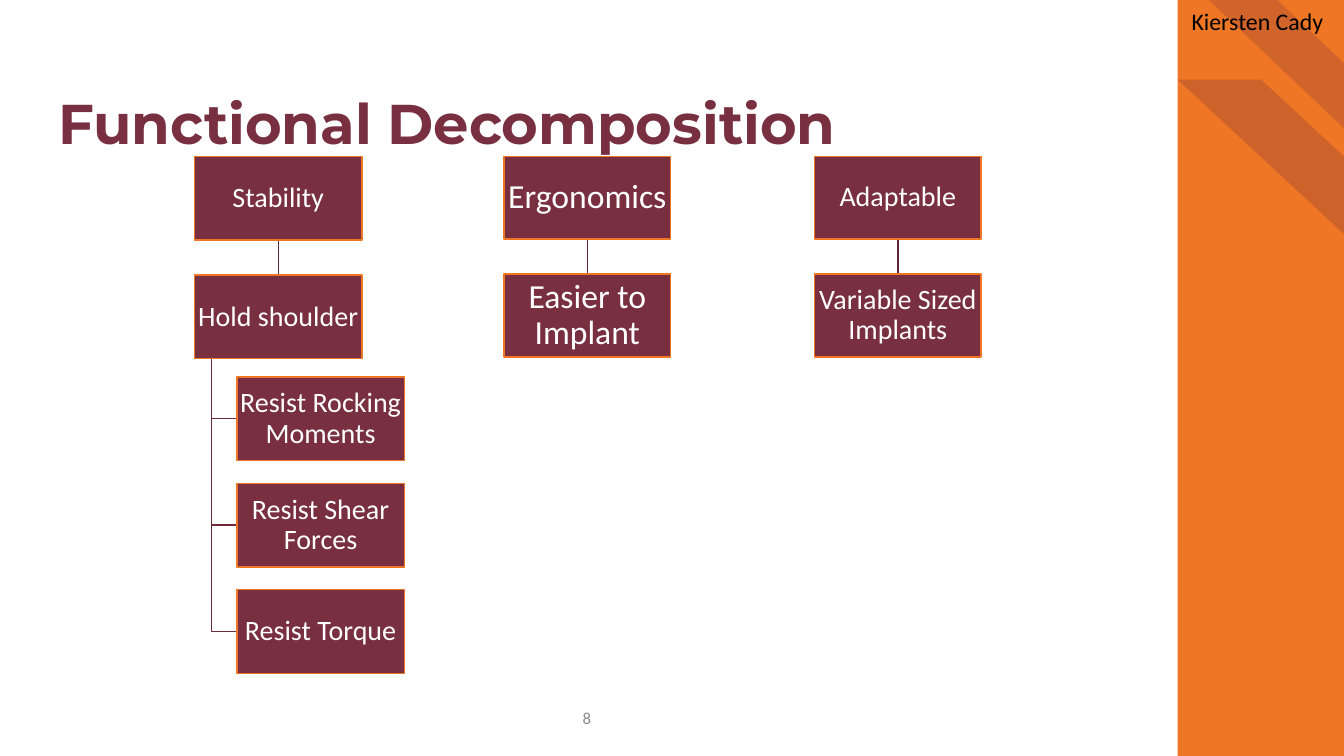
import lxml.etree
import pptx
import pptx.dml.color
import pptx.enum.shapes
import pptx.enum.text
import pptx.oxml.ns
import pptx.util

Inches = pptx.util.Inches
SHAPES = pptx.enum.shapes.MSO_SHAPE
ALIGN = pptx.enum.text.PP_ALIGN
ANCHOR = pptx.enum.text.MSO_ANCHOR
MAROON, ORANGE, WHITE = "782F40", "EE7624", "FFFFFF"
STEM, BRANCH = "602633", "6D2B3A"
LEVEL_GAP = 0.35


def color(hex_value):
    return pptx.dml.color.RGBColor.from_string(hex_value)


def add_xml(parent, tag, **attributes):
    return lxml.etree.SubElement(parent, pptx.oxml.ns.qn(tag), **attributes)


def add_filled(slide, kind, box, fill):
    shape = slide.shapes.add_shape(kind, *map(Inches, box))
    shape.shadow.inherit = False
    shape.fill.solid()
    shape.fill.fore_color.rgb = color(fill)
    shape.line.fill.background()
    return shape


def write(shape, text, size, hex_value, font="Calibri", bold=False,
          align=ALIGN.LEFT, anchor=ANCHOR.TOP, margin=None, spacing=None):
    """Fill a shape with one formatted paragraph."""
    frame = shape.text_frame
    frame.text = text
    frame.word_wrap = True
    frame.vertical_anchor = anchor
    if margin is not None:
        frame.margin_left = frame.margin_right = Inches(margin)
        frame.margin_top = frame.margin_bottom = Inches(margin)
    paragraph = frame.paragraphs[0]
    paragraph.alignment = align
    paragraph.line_spacing = spacing
    run_font = paragraph.runs[0].font
    run_font.name, run_font.size, run_font.bold = font, pptx.util.Pt(size), bold
    run_font.color.rgb = color(hex_value)


def add_text(slide, box, text, size, hex_value, **options):
    write(slide.shapes.add_textbox(*map(Inches, box)), text, size, hex_value, **options)


def add_stripe(slide, box, alpha, adjustment):
    stripe = add_filled(slide, SHAPES.DIAGONAL_STRIPE, box, MAROON)
    stripe.adjustments[0] = adjustment
    stripe.element.spPr.xfrm.set("flipH", "1")
    fill_color = stripe.element.spPr.find(".//" + pptx.oxml.ns.qn("a:srgbClr"))
    add_xml(fill_color, "a:alpha", val=str(alpha * 1000))


def add_side_band(slide, left, top, width, height):
    add_filled(slide, SHAPES.RECTANGLE, (left, top, width, height), ORANGE)
    add_stripe(slide, (left, top + 0.79, 1.68, 1.56), 28, 0.507)
    add_stripe(slide, (left + 0.31, top, 1.36, 1.29), 25, 0.5)
    add_text(slide, (left + 0.04, top + 0.02, 1.57, 0.67), "Kiersten Cady", 17, "000000")


def add_node(slide, box, text, size, margin):
    node = add_filled(slide, SHAPES.RECTANGLE, box, MAROON)
    node.line.color.rgb = color(ORANGE)
    node.line.width = pptx.util.Pt(1)
    write(node, text, size, WHITE, align=ALIGN.CENTER, anchor=ANCHOR.MIDDLE,
          margin=margin, spacing=0.9)


def add_stem(slide, x, top, bottom):
    stem = slide.shapes.add_connector(
        pptx.enum.shapes.MSO_CONNECTOR.STRAIGHT, *map(Inches, (x, top, x, bottom)))
    stem.line.color.rgb = color(STEM)
    stem.line.width = pptx.util.Pt(1)
    add_xml(stem.element.spPr, "a:effectLst")


def add_branch(slide, x, top, end_x, end_y):
    """Draw a line down from a parent and across to its child."""
    builder = slide.shapes.build_freeform(Inches(x), Inches(top))
    corners = [(Inches(x), Inches(end_y)), (Inches(end_x), Inches(end_y))]
    builder.add_line_segments(corners, close=False)
    branch = builder.convert_to_shape()
    branch.shadow.inherit = False
    branch.fill.background()
    branch.line.color.rgb = color(BRANCH)
    branch.line.width = pptx.util.Pt(1)


def add_tree(slide, left, top, width, height, labels, size, margin, leaves=()):
    """Stack a function above its sub-function, with leaves hanging below."""
    second_top = top + height + LEVEL_GAP
    bottom = second_top + height
    leaf_left, leaf_step = left + 0.42, 1.055
    leaf_tops = [bottom + 0.18 + leaf_step * index for index in range(len(leaves))]
    for leaf_top in leaf_tops:
        add_branch(slide, left + 0.17, bottom, leaf_left, leaf_top + height / 2)
    add_stem(slide, left + width / 2, top + height, second_top)
    for label, node_top in zip(labels, (top, second_top)):
        add_node(slide, (left, node_top, width, height), label, size, margin)
    for leaf, leaf_top in zip(leaves, leaf_tops):
        add_node(slide, (leaf_left, leaf_top, width, height), leaf, size, margin)


def main():
    presentation = pptx.Presentation()
    presentation.slide_width = Inches(13.33)
    presentation.slide_height = Inches(7.5)
    slide = presentation.slides.add_slide(presentation.slide_layouts[6])
    add_side_band(slide, 11.68, 0, 1.66, 7.51)
    add_text(slide, (5.42, 6.97, 0.8, 0.3), "8", 12, "8C8C8C",
             align=ALIGN.CENTER, anchor=ANCHOR.MIDDLE)
    add_tree(slide, 1.93, 1.55, 1.66, 0.83, ("Stability", "Hold shoulder"), 20, 0.01,
             ("Resist Rocking Moments", "Resist Shear Forces", "Resist Torque"))
    add_tree(slide, 5, 1.55, 1.65, 0.82, ("Ergonomics", "Easier to Implant"), 24, 0.02)
    add_tree(slide, 8.08, 1.55, 1.65, 0.82, ("Adaptable", "Variable Sized Implants"), 20, 0.01)
    add_text(slide, (0.58, 0.5, 10.5, 1.05), "Functional Decomposition", 40, MAROON,
             font="Montserrat", bold=True, anchor=ANCHOR.BOTTOM, margin=0, spacing=0.9)
    presentation.save("out.pptx")


if __name__ == "__main__":
    main()
